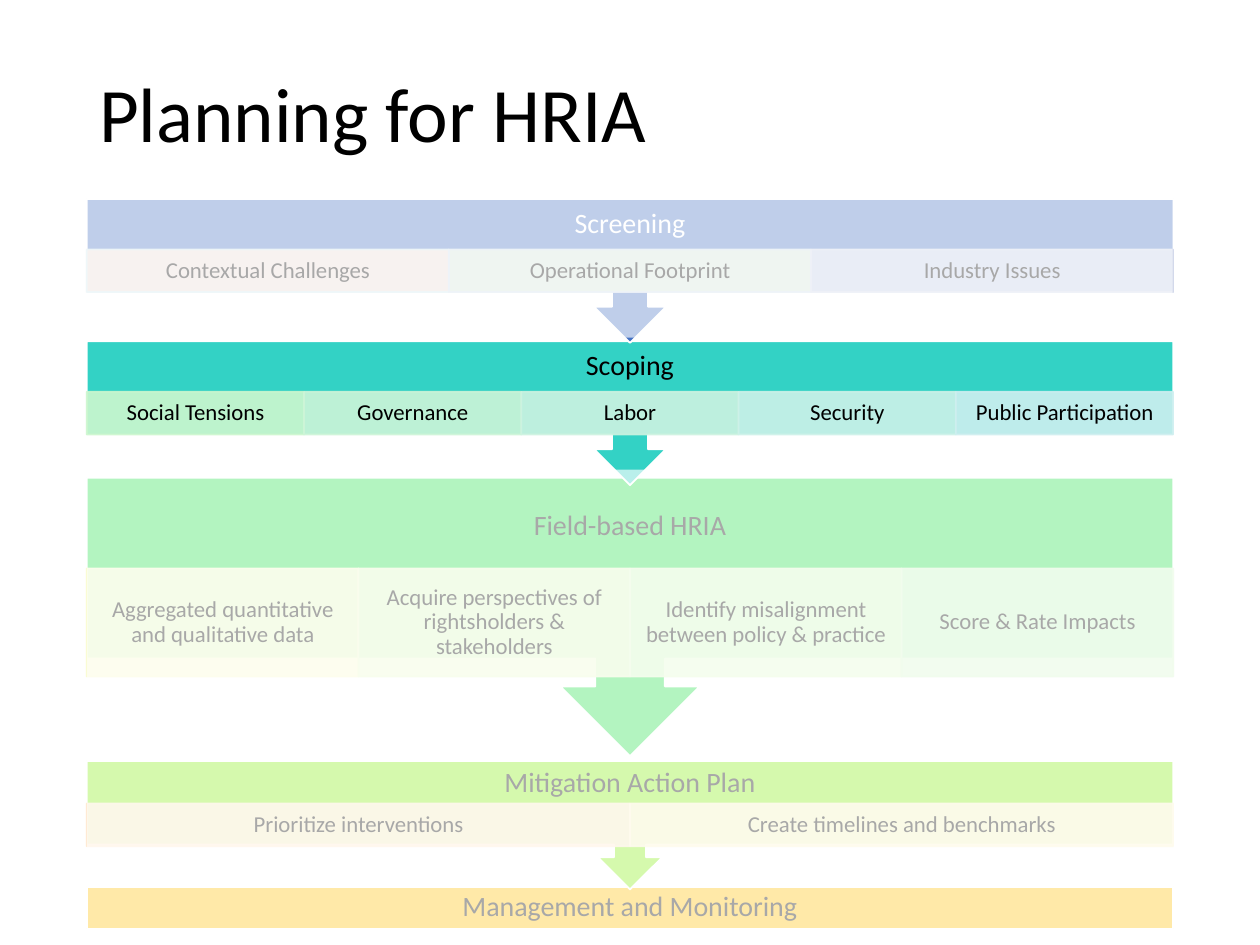
from dataclasses import dataclass

from lxml import etree
from pptx import Presentation
from pptx.dml.color import RGBColor
from pptx.enum.shapes import MSO_SHAPE
from pptx.enum.text import MSO_ANCHOR, PP_ALIGN
from pptx.oxml.ns import qn
from pptx.util import Cm, Pt

RECTANGLE = MSO_SHAPE.RECTANGLE
CALLOUT = MSO_SHAPE.UP_ARROW_CALLOUT
MIDDLE = MSO_ANCHOR.MIDDLE
LEFT = PP_ALIGN.LEFT
CENTER = PP_ALIGN.CENTER

FONT = "Calibri"
BLACK = RGBColor(0x00, 0x00, 0x00)
WHITE = RGBColor(0xFF, 0xFF, 0xFF)
BLUE = RGBColor(0x44, 0x72, 0xC4)
TEAL = RGBColor(0x33, 0xD2, 0xC5)
GREEN = RGBColor(0x23, 0xE1, 0x48)
LIME = RGBColor(0x86, 0xF0, 0x11)
AMBER = RGBColor(0xFF, 0xC0, 0x00)
PALE_ORANGE = RGBColor(0xFB, 0xE5, 0xD6)
PALE_GREEN = RGBColor(0xE2, 0xF0, 0xD9)
PALE_BLUE = RGBColor(0xCF, 0xD6, 0xEA)
PALE_CYAN = RGBColor(0xCE, 0xE6, 0xEE)
PALE_STEEL = RGBColor(0xCF, 0xDD, 0xEC)
MINT_1 = RGBColor(0xCC, 0xF7, 0xCE)
MINT_2 = RGBColor(0xCD, 0xF5, 0xD8)
MINT_3 = RGBColor(0xCD, 0xF3, 0xE1)
MINT_4 = RGBColor(0xCD, 0xF2, 0xE9)
MINT_5 = RGBColor(0xCE, 0xEF, 0xF0)
LEAF_1 = RGBColor(0xFA, 0xFC, 0xCC)
LEAF_2 = RGBColor(0xED, 0xFB, 0xCC)
LEAF_3 = RGBColor(0xE1, 0xFA, 0xCC)
LEAF_4 = RGBColor(0xD6, 0xF8, 0xCC)
PEACH = RGBColor(0xFF, 0xE8, 0xCC)
CREAM = RGBColor(0xFE, 0xF4, 0xCC)

CELL_OPACITY = 90
VEIL_OPACITY = 66
STAGE_LEFT = 1.75
STAGE_WIDTH = 21.9


@dataclass
class Stage:
    title: str
    top: float
    height: float
    header_height: float
    color: RGBColor
    cells: tuple = ()
    cells_offset: float = 0
    cells_height: float = 0.86
    title_color: RGBColor = BLACK


STAGES = (
    Stage("Screening", 4.01, 2.9, 1.02, BLUE, (
        ("Contextual Challenges", PALE_ORANGE, PALE_CYAN),
        ("Operational Footprint", PALE_GREEN, PALE_STEEL),
        ("Industry Issues", PALE_BLUE, PALE_BLUE),
    ), 1.02, title_color=WHITE),
    Stage("Scoping", 6.88, 2.9, 1.02, TEAL, (
        ("Social Tensions", MINT_1, MINT_1),
        ("Governance", MINT_2, MINT_2),
        ("Labor", MINT_3, MINT_3),
        ("Security", MINT_4, MINT_4),
        ("Public Participation", MINT_5, MINT_5),
    ), 1.02),
    Stage("Field-based HRIA", 9.63, 5.61, 1.98, GREEN, (
        ("Aggregated quantitative and qualitative data", LEAF_1, LEAF_1),
        ("Acquire perspectives of rightsholders & stakeholders", LEAF_2, LEAF_2),
        ("Identify misalignment between policy & practice", LEAF_3, LEAF_3),
        ("Score & Rate Impacts", LEAF_4, LEAF_4),
    ), 1.83, 2.18),
    Stage("Mitigation Action Plan", 15.34, 2.59, 0.91, LIME, (
        ("Prioritize interventions", PEACH, PEACH),
        ("Create timelines and benchmarks", CREAM, CREAM),
    ), 0.86),
    Stage("Management and Monitoring", 17.88, 0.84, 0.84, AMBER),
)


def set_opacity(fill_parent, percent):
    color = fill_parent.find(qn("a:solidFill"))[0]
    etree.SubElement(color, qn("a:alpha")).set("val", str(percent * 1000))


def add_block(slide, kind, box, fill, line=None, opacity=100):
    shape = slide.shapes.add_shape(kind, *map(Cm, box))
    shape.shadow.inherit = False
    shape.fill.solid()
    shape.fill.fore_color.rgb = fill
    if line is None:
        shape.line.fill.background()
    else:
        shape.line.color.rgb = line
        shape.line.width = Pt(1)
    if opacity < 100:
        properties = shape.fill._xPr
        set_opacity(properties, opacity)
        if line is not None:
            set_opacity(properties.find(qn("a:ln")), opacity)
    return shape


def write_text(shape, text, size, color=BLACK, alignment=CENTER, margins=(0.25, 0.05)):
    frame = shape.text_frame
    frame.word_wrap = True
    frame.vertical_anchor = MIDDLE
    frame.margin_left = frame.margin_right = Cm(margins[0])
    frame.margin_top = frame.margin_bottom = Cm(margins[1])
    paragraph = frame.paragraphs[0]
    paragraph.alignment = alignment
    paragraph.line_spacing = 0.9
    run = paragraph.add_run()
    run.text = text
    run.font.name = FONT
    run.font.size = Pt(size)
    run.font.color.rgb = color


def add_title(slide, box, text):
    title = slide.shapes.add_textbox(*map(Cm, box))
    write_text(title, text, 44, alignment=LEFT, margins=(0.25, 0.13))


def add_stage(slide, box, stage):
    left, top, width, height = box
    kind = CALLOUT if stage.cells else RECTANGLE
    body = add_block(slide, kind, box, stage.color, WHITE)
    if stage.cells:
        body.rotation = 180
    header = slide.shapes.add_textbox(Cm(left), Cm(top), Cm(width), Cm(stage.header_height))
    write_text(header, stage.title, 16, stage.title_color, margins=(0.3, 0.3))
    for index, (text, fill, line) in enumerate(stage.cells):
        cell_width = width / len(stage.cells)
        cell_box = (left + index * cell_width, top + stage.cells_offset,
                    cell_width, stage.cells_height)
        cell = add_block(slide, RECTANGLE, cell_box, fill, line, CELL_OPACITY)
        write_text(cell, text, 13)


def add_veil(slide, box):
    add_block(slide, RECTANGLE, box, WHITE, opacity=VEIL_OPACITY)


def main():
    presentation = Presentation()
    presentation.slide_width = Cm(25.4)
    presentation.slide_height = Cm(19.05)
    slide = presentation.slides.add_slide(presentation.slide_layouts[6])
    add_title(slide, (STAGE_LEFT, 1.02, STAGE_WIDTH, 2.69), "Planning for HRIA")
    for stage in reversed(STAGES):
        add_stage(slide, (STAGE_LEFT, stage.top, STAGE_WIDTH, stage.height), stage)
    add_veil(slide, (1.75, 9.47, 22.12, 9.25))
    add_veil(slide, (1.52, 3.71, 22.12, 3.1))
    presentation.save("out.pptx")


if __name__ == "__main__":
    main()
